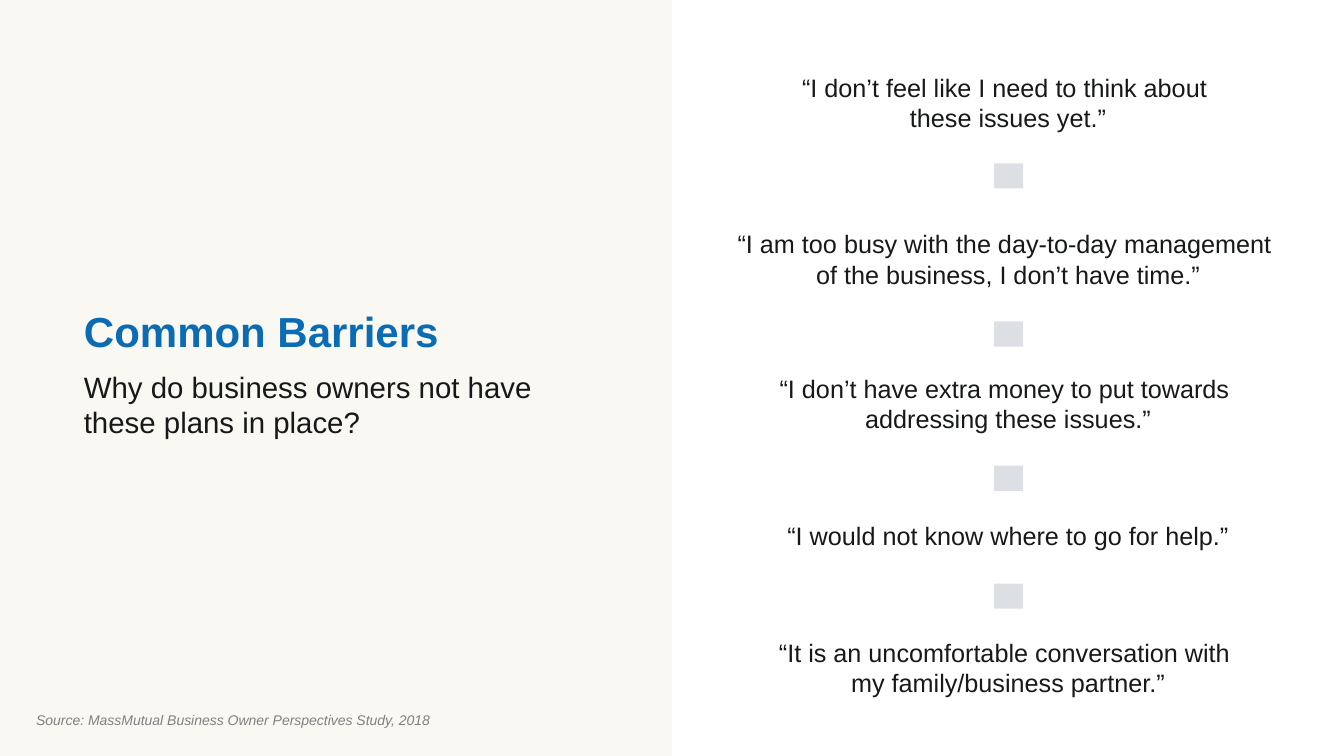
"""Build the Common Barriers slide, with every length a percentage of the slide."""
from dataclasses import dataclass, field

import lxml.etree
import pptx
import pptx.dml.color
import pptx.enum.shapes
import pptx.enum.text
import pptx.oxml.ns
import pptx.shapes.autoshape
import pptx.slide
import pptx.util

RGBColor = pptx.dml.color.RGBColor
ALIGN = pptx.enum.text.PP_ALIGN

CREAM = RGBColor(0xF9, 0xF8, 0xF3)
WHITE = RGBColor(0xFF, 0xFF, 0xFF)
BLUE = RGBColor(0x0C, 0x6C, 0xB3)
INK = RGBColor(0x16, 0x18, 0x19)
GREY = RGBColor(0x80, 0x80, 0x80)
SILVER = RGBColor(0xBA, 0xC1, 0xCB)

SLIDE_WIDTH = pptx.util.Inches(13.33)
SLIDE_HEIGHT = pptx.util.Inches(7.5)
HALF = 50
MARGIN = 5.5
ONE_LINE, TWO_LINES = 5.33, 9.47
MARKER_LEFT, MARKER_WIDTH, MARKER_HEIGHT = 73.95, 2.18, 3.33
MARKER_TOPS = (21.6, 42.53, 61.6, 77.2)


@dataclass(frozen=True)
class Area:
    """A rectangle in percent of the slide's width and height."""

    left: float
    top: float
    width: float
    height: float

    def box(self) -> dict[str, int]:
        """Return the rectangle as shape attributes."""
        return {
            "left": int(SLIDE_WIDTH * self.left / 100),
            "top": int(SLIDE_HEIGHT * self.top / 100),
            "width": int(SLIDE_WIDTH * self.width / 100),
            "height": int(SLIDE_HEIGHT * self.height / 100),
        }


@dataclass(frozen=True)
class Caption:
    """A text with its place and format."""

    text: str
    area: Area
    size: float
    color: RGBColor = INK
    alignment: ALIGN = ALIGN.LEFT
    style: dict[str, bool] = field(default_factory=dict)


def quote(text: str, top: float, height: float = TWO_LINES) -> Caption:
    """Describe an owner's answer, centred on the right half."""
    return Caption(text, Area(HALF, top, HALF, height), 18, alignment=ALIGN.CENTER)


TITLE = Caption("Common Barriers", Area(MARGIN, 39.73, 44.5, 8.13), 30, BLUE, style={"bold": True})
CAPTIONS = (
    Caption("Why do business owners not have these plans in place?", Area(MARGIN, 48.13, 38.5, 10.8), 21),
    quote("“I don’t feel like I need to think about \nthese issues yet.”", 8.93),
    quote("“I am too busy with the day-to-day management \nof the business, I don’t have time.”", 29.6),
    quote("“I don’t have extra money to put towards \naddressing these issues.”", 48.67),
    quote("“I would not know where to go for help.”", 68.13, ONE_LINE),
    quote("“It is an uncomfortable conversation with \vmy family/business partner.”", 83.6),
    Caption(
        "Source: MassMutual Business Owner Perspectives Study, 2018",
        Area(1.95, 93.47, 40.1, 4.27), 10, GREY, style={"italic": True},
    ),
)


def set_attributes(target: object, values: dict[str, object]) -> None:
    """Set each named attribute on the target."""
    for name, value in values.items():
        setattr(target, name, value)


def write_caption(shape: pptx.shapes.autoshape.Shape, caption: Caption) -> None:
    """Place, fill and format a text shape."""
    set_attributes(shape, caption.area.box())
    frame = shape.text_frame
    frame.text = caption.text
    set_attributes(frame, {
        "word_wrap": True,
        "auto_size": pptx.enum.text.MSO_AUTO_SIZE.NONE,
        "vertical_anchor": pptx.enum.text.MSO_ANCHOR.TOP,
    })
    font_format = {"name": "Arial", "size": pptx.util.Pt(caption.size), **caption.style}
    for paragraph in frame.paragraphs:
        paragraph.alignment = caption.alignment
        for run in paragraph.runs:
            set_attributes(run.font, font_format)
            run.font.color.rgb = caption.color


def add_rectangle(slide: pptx.slide.Slide, area: Area, color: RGBColor, opacity: int = 100) -> None:
    """Add a borderless rectangle with the given opacity in percent."""
    shape = slide.shapes.add_shape(pptx.enum.shapes.MSO_SHAPE.RECTANGLE, **area.box())
    shape.shadow.inherit = False
    shape.line.fill.background()
    shape.fill.solid()
    shape.fill.fore_color.rgb = color
    if opacity < 100:
        fill_color = shape.element.xpath("./p:spPr/a:solidFill/a:srgbClr")[0]
        alpha = lxml.etree.SubElement(fill_color, pptx.oxml.ns.qn("a:alpha"))
        alpha.set("val", str(opacity * 1000))


def main() -> None:
    """Build and save the presentation."""
    presentation = pptx.Presentation()
    set_attributes(presentation, {"slide_width": SLIDE_WIDTH, "slide_height": SLIDE_HEIGHT})
    slide = presentation.slides.add_slide(presentation.slide_layouts.get_by_name("Title Only"))
    slide.background.fill.solid()
    slide.background.fill.fore_color.rgb = CREAM
    add_rectangle(slide, Area(HALF, 0, HALF, 100), WHITE)
    write_caption(slide.shapes.title, TITLE)
    for caption in CAPTIONS:
        write_caption(slide.shapes.add_textbox(**caption.area.box()), caption)
    for top in MARKER_TOPS:
        add_rectangle(slide, Area(MARKER_LEFT, top, MARKER_WIDTH, MARKER_HEIGHT), SILVER, opacity=50)
    presentation.save("out.pptx")


if __name__ == "__main__":
    main()
